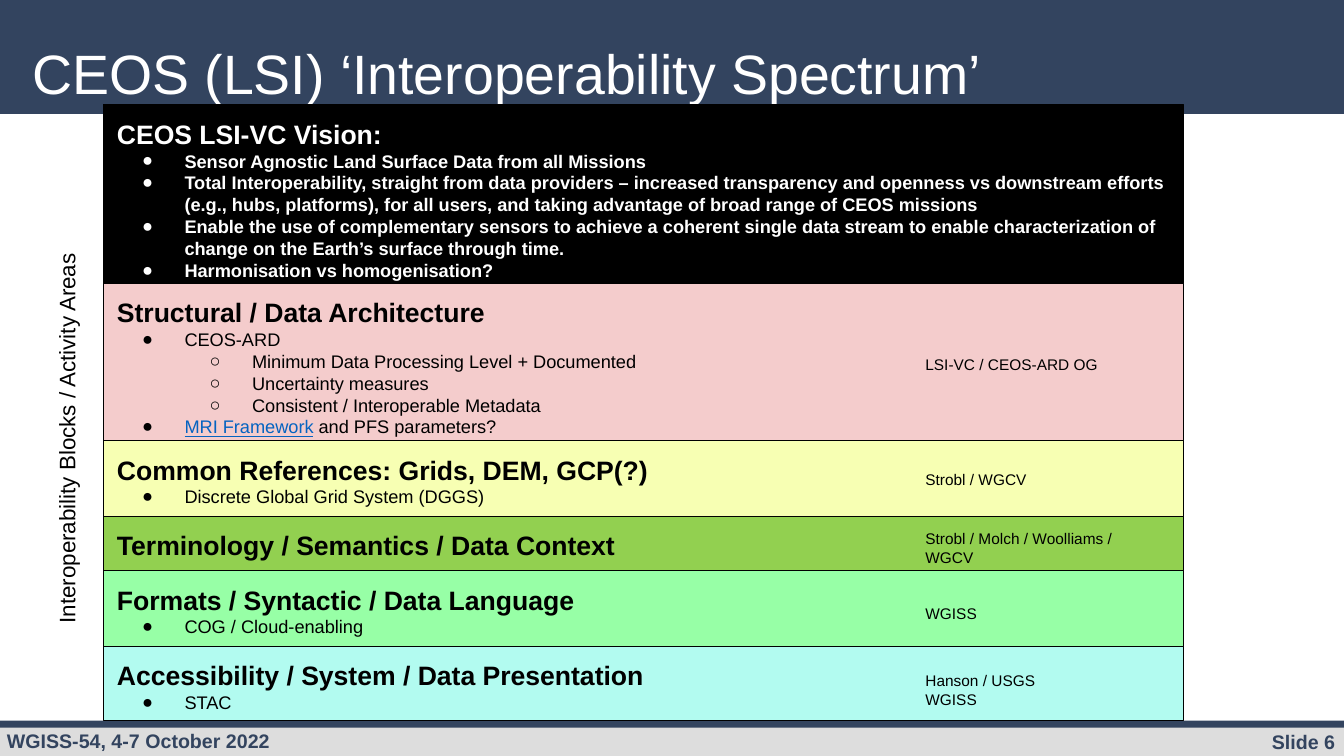
"""Build the interoperability spectrum slide: six stacked blocks with their owners."""
from dataclasses import dataclass

from lxml import etree
from pptx import Presentation
from pptx.dml.color import RGBColor
from pptx.enum.shapes import MSO_SHAPE
from pptx.enum.text import MSO_ANCHOR, PP_ALIGN
from pptx.oxml.ns import qn
from pptx.util import Inches, Pt

RECTANGLE = MSO_SHAPE.RECTANGLE
TOP = MSO_ANCHOR.TOP
LEFT, RIGHT = PP_ALIGN.LEFT, PP_ALIGN.RIGHT


@dataclass(frozen=True)
class Theme:
    """Colours, type sizes and font of the slide."""
    font: str = "Arial"
    navy: str = "33445F"
    grey: str = "DDDDDD"
    black: str = "000000"
    white: str = "FFFFFF"
    link: str = "0563C1"
    pink: str = "F4CCCC"
    yellow: str = "F7FFB3"
    olive: str = "92D050"
    green: str = "97FFA6"
    cyan: str = "B2FBF0"
    title: float = 39.6
    heading: float = 19
    axis: float = 16
    footer: float = 14
    body: float = 13
    owner: float = 11


theme = Theme()
presentation = Presentation()
presentation.slide_width = Inches(13.33)
presentation.slide_height = Inches(7.5)
slide = presentation.slides.add_slide(presentation.slide_layouts[5])
shapes = slide.shapes


def place(left, top, width, height):
    """Turn percentages of the slide into lengths."""
    across, down = presentation.slide_width / 100, presentation.slide_height / 100
    return [int(left * across), int(top * down), int(width * across), int(height * down)]


def write(shape, paragraphs, inset=(0.13, 0.13), alignment=LEFT):
    """Fill a shape with (level, runs) paragraphs; level -1 has no bullet."""
    frame = shape.text_frame
    frame.word_wrap = True
    frame.vertical_anchor = TOP
    frame.margin_left = frame.margin_right = Inches(inset[0])
    frame.margin_top, frame.margin_bottom = Inches(inset[1]), 0
    for index, (level, runs) in enumerate(paragraphs):
        paragraph = frame.paragraphs[0] if index == 0 else frame.add_paragraph()
        paragraph.alignment = alignment
        if level >= 0:
            paragraph.level = level
            properties = paragraph._p.get_or_add_pPr()
            properties.set("marL", str(Inches(0.67 * (level + 1))))
            properties.set("indent", str(Inches(-0.42)))
            bullet_color = etree.SubElement(properties, qn("a:buClr"))
            etree.SubElement(bullet_color, qn("a:srgbClr"), val=runs[-1][2])
            etree.SubElement(properties, qn("a:buFont"), typeface=theme.font)
            etree.SubElement(properties, qn("a:buChar"), char="●○"[level])
        for text, size, color, bold in runs:
            run = paragraph.add_run()
            run.text = text
            run.font.name = theme.font
            run.font.size = Pt(size)
            run.font.bold = bold
            run.font.underline = color == theme.link
            run.font.color.rgb = RGBColor.from_string(color)


bars = [
    (0, 0, 100, 15.07, theme.navy),
    (0, 95.87, 100, 4.13, theme.grey),
    (0, 95.33, 100, 0.93, theme.navy),
]
for *position, color in bars:
    bar = shapes.add_shape(RECTANGLE, *place(*position))
    bar.shadow.inherit = False
    bar.fill.solid()
    bar.fill.fore_color.rgb = RGBColor.from_string(color)
    bar.line.fill.background()

title = shapes.title
title.left, title.top, title.width, title.height = place(1.43, 2.53, 77.04, 11.33)
write(title, [(-1, [("CEOS (LSI) ‘Interoperability Spectrum’", theme.title, theme.white, False)])],
      inset=(0.13, 0.2))
shapes._spTree.append(title._element)

footers = [
    (84.25, 95.87, 15.83, 4.53, RIGHT, "Slide 6"),
    (-0.23, 95.73, 40.44, 4.53, LEFT, "WGISS-54, 4-7 October 2022"),
]
for *position, alignment, text in footers:
    footer = shapes.add_textbox(*place(*position))
    write(footer, [(-1, [(text, theme.footer, theme.navy, True)])], (0.1, 0.05), alignment)

axis_label = shapes.add_textbox(*place(-12.23, 50, 34.43, 7.2))
axis_label.rotation = 270
write(axis_label, [(-1, [("Interoperability Blocks / Activity Areas", theme.axis, theme.black, False)])])

blocks = [
    (13.87, theme.black, "CEOS LSI-VC Vision:", [
        (0, ["Sensor Agnostic Land Surface Data from all Missions"]),
        (0, ["Total Interoperability, straight from data providers – increased transparency and "
             "openness vs downstream efforts (e.g., hubs, platforms), for all users, and taking "
             "advantage of broad range of CEOS missions"]),
        (0, ["Enable the use of complementary sensors to achieve a coherent single data stream to "
             "enable characterization of change on the Earth’s surface through time."]),
        (0, ["Harmonisation vs homogenisation?"]),
    ], 0, []),
    (37.47, theme.pink, "Structural / Data Architecture", [
        (0, ["CEOS-ARD"]),
        (1, ["Minimum Data Processing Level + Documented"]),
        (1, ["Uncertainty measures"]),
        (1, ["Consistent / Interoperable Metadata"]),
        (0, ["MRI Framework", " and PFS parameters?"]),
    ], 45.2, ["LSI-VC / CEOS-ARD OG"]),
    (58.27, theme.yellow, "Common References: Grids, DEM, GCP(?)",
     [(0, ["Discrete Global Grid System (DGGS)"])], 60.4, ["Strobl / WGCV"]),
    (68.27, theme.olive, "Terminology / Semantics / Data Context",
     [], 68.27, ["Strobl / Molch / Woolliams / WGCV"]),
    (75.47, theme.green, "Formats / Syntactic / Data Language",
     [(0, ["COG / Cloud-enabling"])], 78.13, ["WGISS"]),
    (85.47, theme.cyan, "Accessibility / System / Data Presentation",
     [(0, ["STAC"])], 87.07, ["Hanson / USGS", "WGISS"]),
]
bottoms = [block[0] for block in blocks[1:]] + [95.33]
for (top, fill, heading, points, owner_top, owners), bottom in zip(blocks, bottoms):
    on_black = fill == theme.black
    ink = theme.white if on_black else theme.black
    block = shapes.add_shape(RECTANGLE, *place(7.73, top, 80.33, bottom - top))
    block.shadow.inherit = False
    block.fill.solid()
    block.fill.fore_color.rgb = RGBColor.from_string(fill)
    block.line.color.rgb = RGBColor.from_string(theme.black)
    block.line.width = Pt(0.75)
    paragraphs = [(-1, [(heading, theme.heading, ink, True)])]
    for level, texts in points:
        runs = [(text, theme.body, theme.link if text == "MRI Framework" else ink, on_black)
                for text in texts]
        paragraphs.append((level, runs))
    write(block, paragraphs)
    if owners:
        owner_label = shapes.add_textbox(*place(67.88, owner_top, 17.03, 3.33 + 2.27 * len(owners)))
        write(owner_label, [(-1, [(owner, theme.owner, theme.black, False)]) for owner in owners])

presentation.save("out.pptx")
